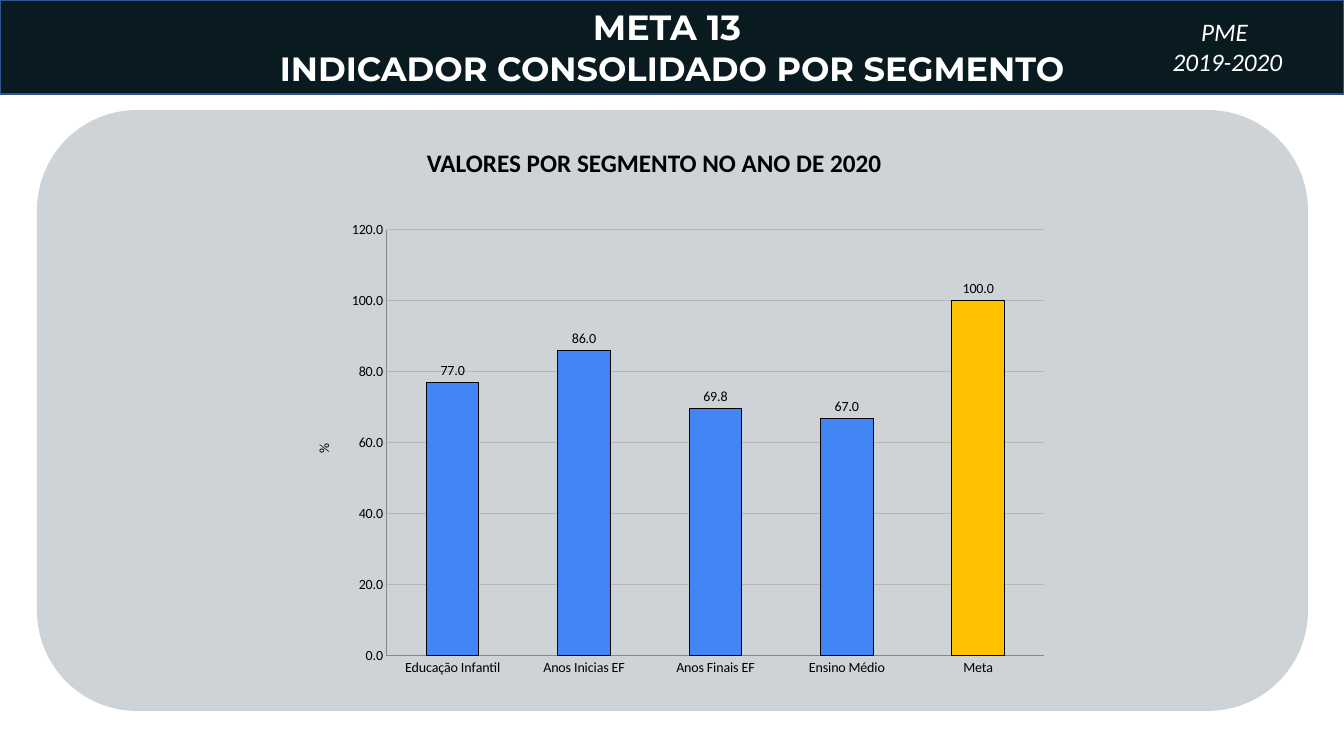
from lxml.etree import SubElement
from pptx import Presentation
from pptx.chart.data import CategoryChartData
from pptx.dml.color import RGBColor
from pptx.enum.chart import XL_CHART_TYPE as CHART, XL_LABEL_POSITION as LABEL, XL_TICK_MARK as TICK
from pptx.enum.shapes import MSO_SHAPE as SHAPE
from pptx.enum.text import MSO_ANCHOR as ANCHOR, MSO_AUTO_SIZE as FIT, PP_ALIGN as ALIGN
from pptx.oxml.ns import qn
from pptx.util import Pt

EMU_PER_PX = 914400 / 100.8


def px(length):
    return round(length * EMU_PER_PX)


def color(code):
    return RGBColor.from_string(code)


def set_format(target, values):
    for name, value in values.items():
        if name == "color":
            target.color.rgb = color(value)
        else:
            setattr(target, name, value)


class SegmentSlide:
    heading = {"name": "Montserrat", "bold": True, "color": "FFFFFF"}
    subtitle = {"name": "Calibri", "size": Pt(18), "bold": True, "color": "000000"}
    period = {"name": "Calibri", "size": Pt(18), "italic": True, "color": "FFFFFF"}
    chart_text = {"name": "Calibri", "size": Pt(10), "bold": False, "color": "000000"}
    outline = {"color": "000000", "width": Pt(0.75)}
    grid = {"color": "B7B7B7", "width": Pt(0.75)}
    axis_line = {"color": "878787", "width": Pt(0.75)}

    def __init__(self, deck):
        self.slide = deck.slides.add_slide(deck.slide_layouts[6])

    def fill_frame(self, frame, lines, font, align):
        for index, (text, extra) in enumerate(lines):
            para = frame.paragraphs[0] if index == 0 else frame.add_paragraph()
            para.alignment = align
            span = para.add_run()
            span.text = text
            set_format(span.font, {**font, **extra})

    def panel(self, kind, bounds, fill, line=None):
        box = self.slide.shapes.add_shape(kind, *map(px, bounds))
        box.shadow.inherit = False
        box.fill.solid()
        box.fill.fore_color.rgb = color(fill)
        if line:
            set_format(box.line, line)
        else:
            box.line.fill.background()
        return box

    def text(self, bounds, lines, font, align=ALIGN.LEFT, wrap=True):
        frame = self.slide.shapes.add_textbox(*map(px, bounds)).text_frame
        set_format(frame, {"word_wrap": wrap, "auto_size": FIT.SHAPE_TO_FIT_TEXT})
        self.fill_frame(frame, lines, font, align)

    def column_chart(self, bounds, plot_bounds, values, fill, highlights):
        data = CategoryChartData(number_format="0.0")
        data.categories = list(values)
        data.add_series("Series 1", list(values.values()))
        chart = self.slide.shapes.add_chart(
            CHART.COLUMN_CLUSTERED, *map(px, bounds), data).chart
        set_format(chart, {"has_legend": False, "has_title": False})
        set_format(chart.font, self.chart_text)

        # Axes
        for axis in (chart.category_axis, chart.value_axis):
            set_format(axis, {"major_tick_mark": TICK.NONE, "minor_tick_mark": TICK.NONE})
            set_format(axis.tick_labels.font, self.chart_text)
            set_format(axis.format.line, self.axis_line)
        scale = chart.value_axis
        set_format(scale, {"minimum_scale": 0, "maximum_scale": 120, "major_unit": 20,
                           "has_major_gridlines": True})
        set_format(scale.major_gridlines.format.line, self.grid)
        set_format(scale.tick_labels, {"number_format": "0.0",
                                       "number_format_is_linked": False})
        self.fill_frame(scale.axis_title.text_frame, [("%", {})],
                        self.chart_text, ALIGN.CENTER)

        # Columns and their values
        plot = chart.plots[0]
        set_format(plot, {"gap_width": 150, "vary_by_categories": False,
                          "has_data_labels": True})
        set_format(plot.data_labels, {"show_value": True, "number_format": "0.0",
                                      "number_format_is_linked": False,
                                      "position": LABEL.OUTSIDE_END})
        set_format(plot.data_labels.font, self.chart_text)
        series = plot.series[0]
        columns = [(series, fill)]
        columns += [(series.points[index], code) for index, code in highlights.items()]
        for column, code in columns:
            column.format.fill.solid()
            column.format.fill.fore_color.rgb = color(code)
            set_format(column.format.line, self.outline)
        self.place_plot(chart, bounds, plot_bounds)

    def place_plot(self, chart, bounds, plot_bounds):
        left, top, width, height = bounds
        x, y, w, h = plot_bounds
        area = chart.plots[0]._element.getparent()
        layout = area.find(qn("c:layout"))
        if layout is None:
            layout = SubElement(area, qn("c:layout"))
            area.insert(0, layout)
        manual = SubElement(layout, qn("c:manualLayout"))
        settings = {"layoutTarget": "inner", "xMode": "edge", "yMode": "edge",
                    "x": (x - left) / width, "y": (y - top) / height,
                    "w": w / width, "h": h / height}
        for name, value in settings.items():
            SubElement(manual, qn(f"c:{name}")).set("val", str(value))


def main():
    deck = Presentation()
    deck.slide_width, deck.slide_height = px(1344), px(756)
    page = SegmentSlide(deck)

    # Header band
    band = page.panel(SHAPE.RECTANGLE, (0, 0, 1344, 94), "0A1A21",
                      {"color": "325491", "width": Pt(1)})
    set_format(band.text_frame, {"word_wrap": True, "vertical_anchor": ANCHOR.MIDDLE})
    page.fill_frame(band.text_frame,
                    [("META 13 ", {"size": Pt(25)}),
                     ("INDICADOR CONSOLIDADO POR SEGMENTO", {"size": Pt(24)})],
                    page.heading, ALIGN.CENTER)

    # Chart panel
    page.panel(SHAPE.ROUNDED_RECTANGLE, (37, 110, 1271, 601), "CED3D8")
    page.text((417, 142, 480, 40), [("VALORES POR SEGMENTO NO ANO DE 2020", {})],
              page.subtitle, wrap=False)
    page.column_chart(
        (294, 212, 765, 473), (387, 230, 657, 426),
        {"Educação Infantil": 77, "Anos Inicias EF": 86, "Anos Finais EF": 69.8,
         "Ensino Médio": 67, "Meta": 100},
        "4285F4", {4: "FFC000"})

    # Plan period
    page.text((1096, 11, 263, 72), [("PME ", {}), ("2019-2020", {})],
              page.period, ALIGN.CENTER)

    deck.save("out.pptx")


if __name__ == "__main__":
    main()
